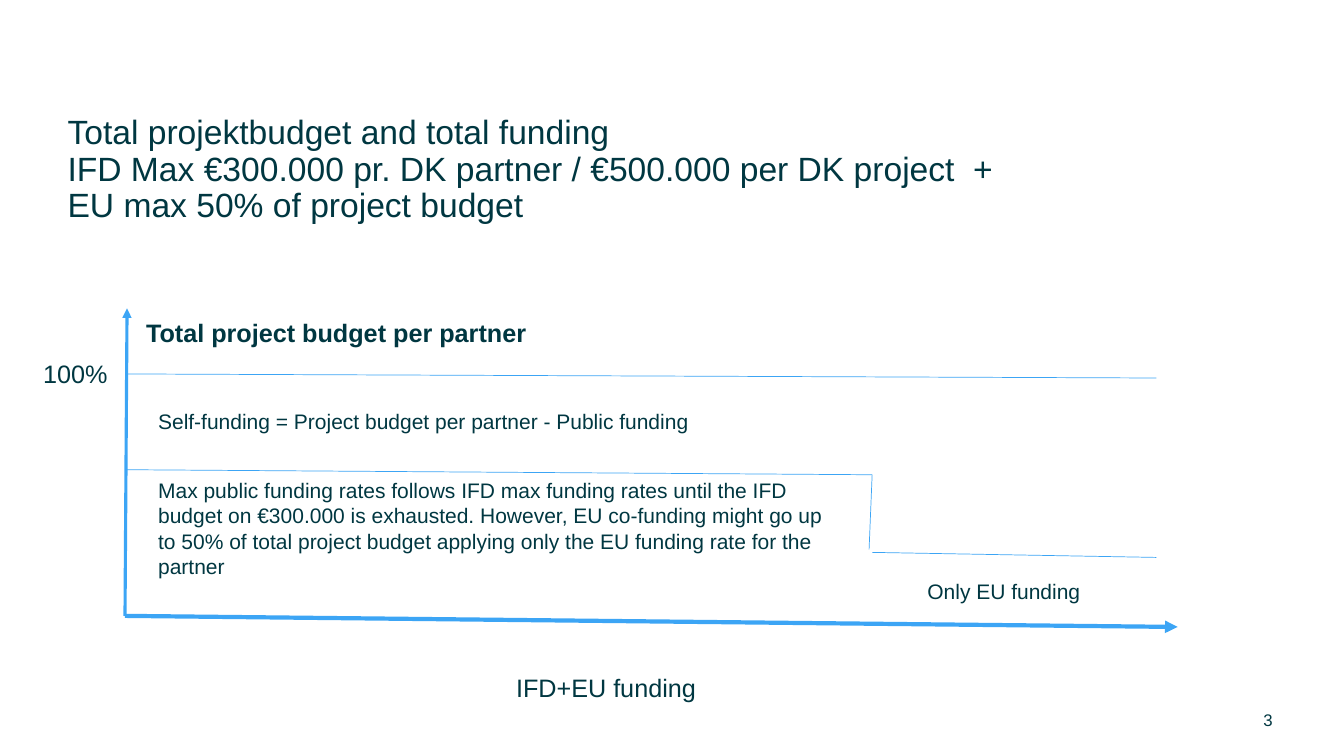
from pptx import Presentation
from pptx.dml.color import RGBColor
from pptx.enum.shapes import MSO_CONNECTOR as Conn
from pptx.enum.text import MSO_ANCHOR as Anchor, PP_ALIGN as Align
from pptx.util import Pt
from pptx.oxml.ns import qn
from lxml.etree import SubElement

INK = RGBColor(0x00, 0x37, 0x41)
BLUE = RGBColor(0x3C, 0xA5, 0xF5)
FONT = "Arial"
PX = 9144  # 100 px to the inch

# Content: text, box (left, top, width, height), size
TITLE = ("Total projektbudget and total funding\v"
         "IFD Max €300.000 pr. DK partner / €500.000 per DK project  + "
         "EU max 50% of project budget")
RATES = ("Max public funding rates follows IFD max funding rates until the IFD "
         "budget on €300.000 is exhausted. However, EU co-funding might go up "
         "to 50% of total project budget applying only the EU funding rate "
         "for the partner")
HEAD = ("Total project budget per partner", (135, 310, 438, 40), 18)
LABELS = [
    ("IFD+EU funding", (502, 662, 213, 40), 18),
    ("100%", (33, 351, 85, 40), 18),
    ("Self-funding = Project budget per partner - Public funding",
     (147, 400, 558, 35), 15),
    ("Only EU funding", (910, 569, 174, 35), 15),
]

# Lines: start, end
ORIGIN = (124, 611)
AXES = [((1168, 622), 3), ((126, 306), 2.25)]  # tip, weight
LEVELS = [
    ((126, 371), (1147, 375)),  # full budget
    ((126, 466), (865, 471)),   # public funding
    ((865, 471), (862, 545)),   # step down
    ((865, 548), (1147, 553)),  # EU only
]


def add_text(text, box, size, pad=(10, 5), wrap=True):
    shape = slide.shapes.add_textbox(*(v * PX for v in box))
    frame = shape.text_frame
    frame.word_wrap = wrap
    frame.vertical_anchor = Anchor.TOP
    frame.margin_left = frame.margin_right = pad[0] * PX
    frame.margin_top = frame.margin_bottom = pad[1] * PX
    para = frame.paragraphs[0]
    para.text = text
    font = para.font
    font.name, font.size = FONT, Pt(size)
    font.color.rgb = INK
    return para


def add_line(start, end, weight, arrow=False):
    line = slide.shapes.add_connector(
        Conn.STRAIGHT, *(v * PX for v in start + end))
    line.line.color.rgb = BLUE
    line.line.width = Pt(weight)
    if arrow:
        SubElement(line.line._get_or_add_ln(), qn("a:tailEnd"), type="triangle")
    SubElement(line._element.spPr, qn("a:effectLst"))


prs = Presentation()
prs.slide_width, prs.slide_height = 1333 * PX, 750 * PX
slide = prs.slides.add_slide(prs.slide_layouts[6])

# Title and page number
add_text(TITLE, (67, 115, 940, 96), 24, pad=(0, 0)).line_spacing = 0.9
add_text("3", (972, 704, 300, 40), 12, pad=(10, 0)).alignment = Align.RIGHT

# Axes and funding levels
for tip, weight in AXES:
    add_line(ORIGIN, tip, weight, arrow=True)
for start, end in LEVELS:
    add_line(start, end, 0.5)

# Labels
add_text(*HEAD).font.bold = True
add_text(RATES, (147, 469, 681, 111), 15)
for label in LABELS:
    add_text(*label, wrap=False)

prs.save("out.pptx")
